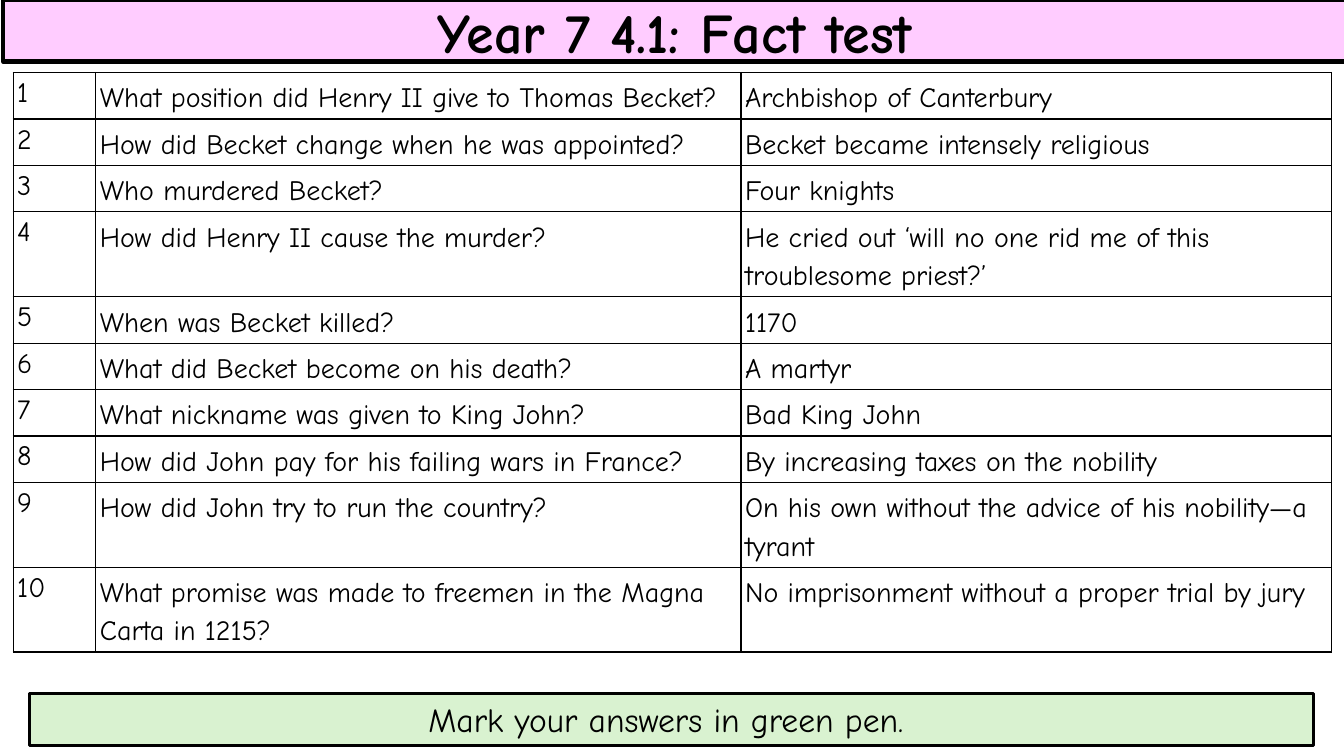
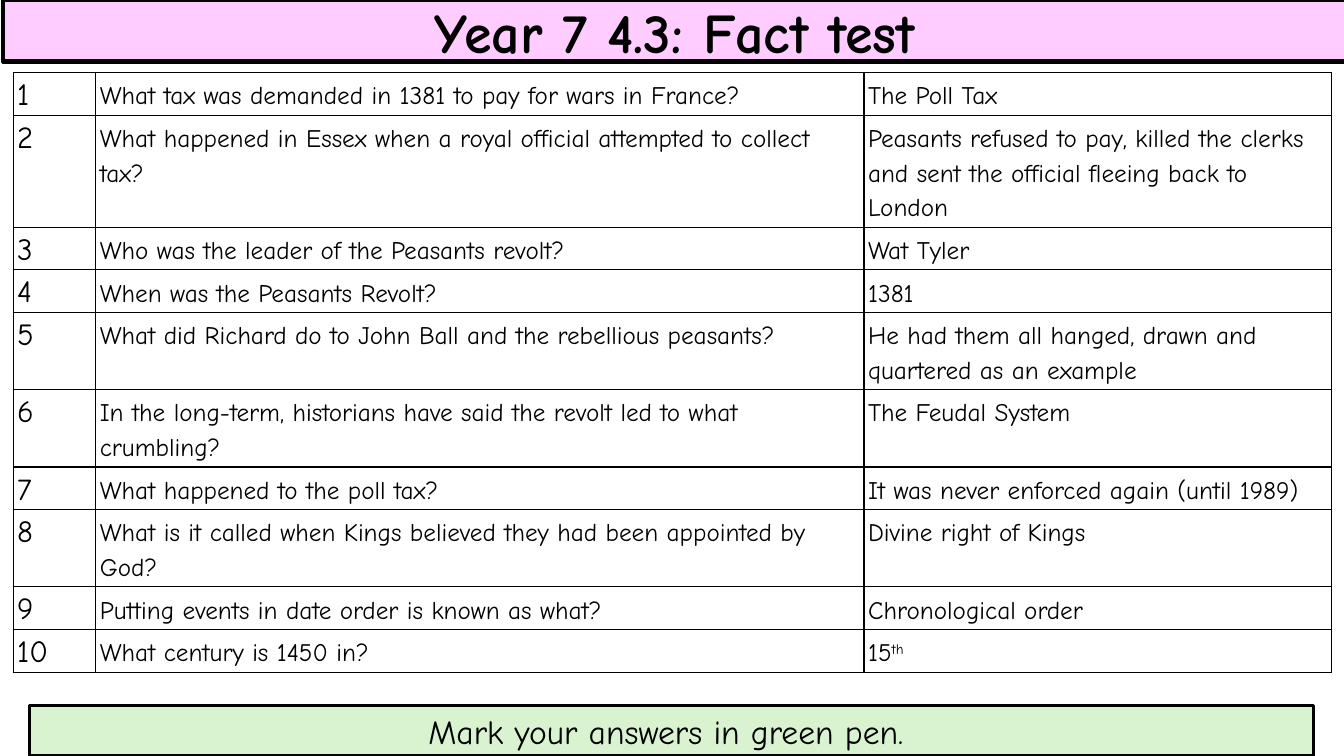
from pptx import Presentation
from pptx.dml.color import RGBColor
from pptx.enum.shapes import MSO_SHAPE
from pptx.enum.text import MSO_ANCHOR, PP_ALIGN
from pptx.oxml import parse_xml
from pptx.oxml.ns import nsdecls
from pptx.util import Inches, Pt

# Shared style
INK, PAPER, PINK, GREEN = "000000", "FFFFFF", "FFCCFF", "D9F2D0"
FACE = "Comic Neue"
HEAD = {"size": Pt(40), "bold": True}
NOTE = {"size": Pt(24)}
MID = {"alignment": PP_ALIGN.CENTER}
NUM = {"line_spacing": 1.15, "space_after": Pt(10)}
BODY = {"line_spacing": 1.19, "space_after": Pt(6)}
PAD = Inches(0.04)
SIDES = {"margin_left": PAD, "margin_right": PAD}
NUM_PAD = {**SIDES, "margin_top": 0, "margin_bottom": 0}
BODY_PAD = {**SIDES, "margin_top": PAD, "margin_bottom": PAD}


def hue(code):
    return RGBColor.from_string(code)


def apply(thing, look):
    for name, value in look.items():
        setattr(thing, name, value)


class Deck:
    """Holds the style and the current slide; lengths are percent of the slide."""

    def __init__(self):
        self.file = Presentation()
        self.file.slide_width = Inches(13.33)
        self.file.slide_height = Inches(7.5)

    def wide(self, share):
        return round(self.file.slide_width * share / 100)

    def high(self, share):
        return round(self.file.slide_height * share / 100)

    def area(self, x, y, w, h):
        return self.wide(x), self.high(y), self.wide(w), self.high(h)

    def page(self):
        self.slide = self.file.slides.add_slide(self.file.slide_layouts[6])

    def label(self, frame, text, font, para):
        """Fill one paragraph; text after ^ is raised."""
        line = frame.paragraphs[0]
        apply(line, para)
        for i, part in enumerate(text.split("^")):
            run = line.add_run()
            run.text = part
            apply(run.font, {"name": FACE, **font})
            run.font.color.rgb = hue(INK)
            if i:
                run.font._element.set("baseline", "30000")

    def bar(self, box, text, fill, edge, font, anchor):
        shape = self.slide.shapes.add_shape(MSO_SHAPE.RECTANGLE, *self.area(*box))
        shape.shadow.inherit = False
        shape.fill.solid()
        shape.fill.fore_color.rgb = hue(fill)
        shape.line.color.rgb = hue(INK)
        shape.line.width = Pt(edge)
        apply(shape.text_frame, {"word_wrap": True, "vertical_anchor": anchor})
        self.label(shape.text_frame, text, font, MID)

    def cell(self, cell, text, size, para, pad):
        apply(cell, pad)
        for side in "LRTB":
            cell._tc.get_or_add_tcPr().append(parse_xml(
                f'<a:ln{side} {nsdecls("a")} w="{Pt(1)}"><a:solidFill>'
                f'<a:srgbClr val="{INK}"/></a:solidFill></a:ln{side}>'))
        cell.fill.solid()
        cell.fill.fore_color.rgb = hue(PAPER)
        self.label(cell.text_frame, text, {"size": Pt(size)}, para)

    def quiz(self, cols, facts, num, size):
        """Numbered table; each fact is lines, question, answer."""
        tall = [1.07 + lines * size / 4 for lines, _, _ in facts]
        box = self.area(0.98, 9.6, sum(cols), sum(tall))
        table = self.slide.shapes.add_table(len(facts), len(cols), *box).table
        apply(table, {"first_row": False, "horz_banding": False})
        for col, share in zip(table.columns, cols):
            col.width = self.wide(share)
        for i, (row, share, fact) in enumerate(zip(table.rows, tall, facts), 1):
            row.height = self.high(share)
            first, *rest = row.cells
            self.cell(first, str(i), num, NUM, NUM_PAD)
            for cell, text in zip(rest, fact[1:]):
                self.cell(cell, text, size, BODY, BODY_PAD)

    def test(self, code, cols, facts, num, size, foot):
        """One whole slide: table, title band and marking note."""
        self.page()
        self.quiz(cols, facts, num, size)
        self.bar((0.23, 0, 100, 8.13), f"Year 7 {code}: Fact test",
                 PINK, 3, HEAD, MSO_ANCHOR.MIDDLE)
        self.bar((2.18, foot[0], 95.57, foot[1]), "Mark your answers in green pen. ",
                 GREEN, 2.25, NOTE, MSO_ANCHOR.TOP)


# Lines, question, answer
BECKET = [
    (1, "What position did Henry II give to Thomas Becket?", "Archbishop of Canterbury"),
    (1, "How did Becket change when he was appointed?", "Becket became intensely religious"),
    (1, "Who murdered Becket?", "Four knights"),
    (2, "How did Henry II cause the murder?",
     "He cried out ‘will no one rid me of this troublesome priest?’"),
    (1, "When was Becket killed?", "1170"),
    (1, "What did Becket become on his death?", "A martyr"),
    (1, "What nickname was given to King John?", "Bad King John"),
    (1, "How did John pay for his failing wars in France?",
     "By increasing taxes on the nobility"),
    (2, "How did John try to run the country?",
     "On his own without the advice of his nobility—a tyrant"),
    (2, "What promise was made to freemen in the Magna Carta in 1215?",
     "No imprisonment without a proper trial by jury"),
]
REVOLT = [
    (1, "What tax was demanded in 1381 to pay for wars in France?", "The Poll Tax"),
    (3, "What happened in Essex when a royal official attempted to collect tax?",
     "Peasants refused to pay, killed the clerks and sent the official fleeing back to London"),
    (1, "Who was the leader of the Peasants revolt?", "Wat Tyler"),
    (1, "When was the Peasants Revolt?", "1381"),
    (2, "What did Richard do to John Ball and the rebellious peasants?",
     "He had them all hanged, drawn and quartered as an example"),
    (2, "In the long-term, historians have said the revolt led to what crumbling?",
     "The Feudal System"),
    (1, "What happened to the poll tax?", "It was never enforced again (until 1989)"),
    (2, "What is it called when Kings believed they had been appointed by God?",
     "Divine right of Kings"),
    (1, "Putting events in date order is known as what?", "Chronological order"),
    (1, "What century is 1450 in?", "15^th"),
]


def main():
    deck = Deck()
    deck.test("4.1", (6.15, 48.01, 43.96), BECKET, 20, 20, (91.73, 6.93))
    deck.test("4.3", (6.15, 57.16, 34.81), REVOLT, 22, 18, (93.33, 6.67))
    deck.file.save("out.pptx")


if __name__ == "__main__":
    main()
